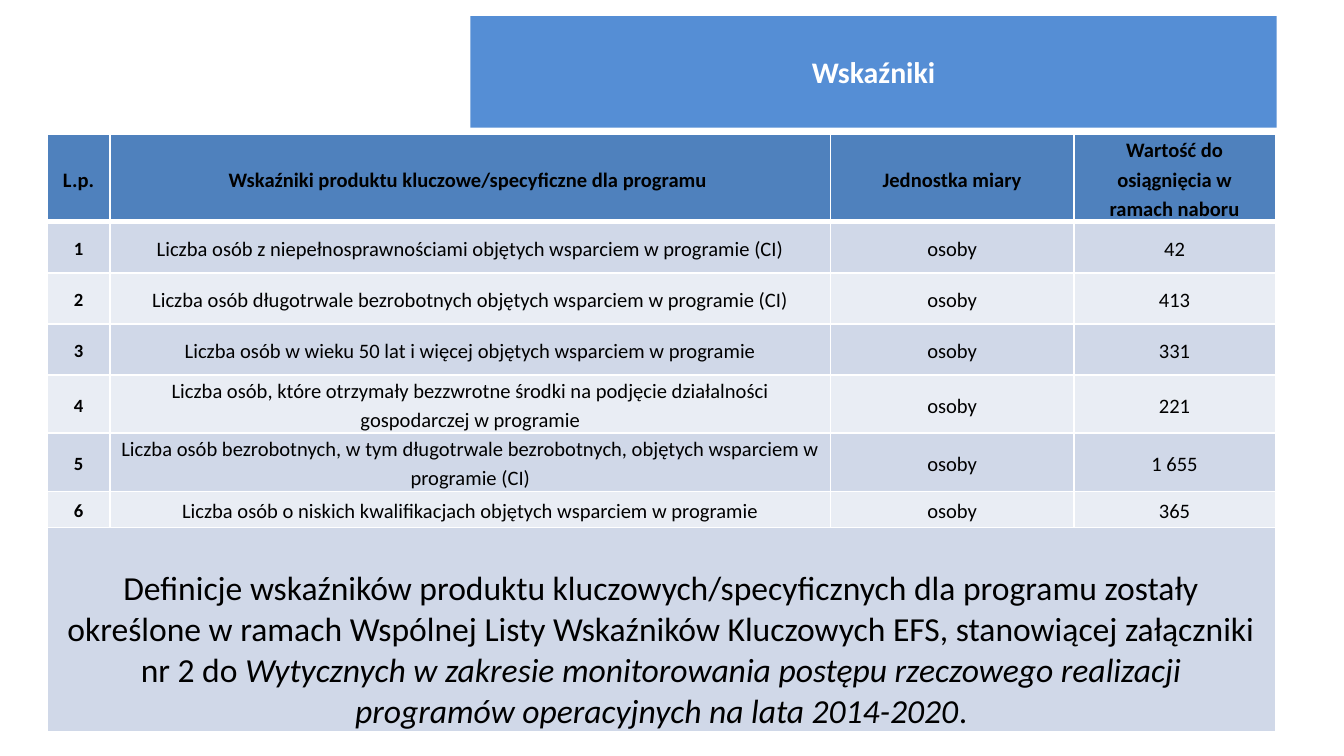
from lxml.etree import SubElement
from pptx import Presentation
from pptx.dml.color import RGBColor
from pptx.enum.text import MSO_ANCHOR as Anchor, MSO_AUTO_SIZE as AutoSize, PP_ALIGN as Align
from pptx.oxml.ns import qn
from pptx.util import Inches, Pt

COLORS = {
    "title": "558ED5",
    "header": "4F81BD",
    "odd": "D0D8E8",
    "even": "E9EDF4",
    "white": "FFFFFF",
    "black": "000000",
}
COLUMN_WIDTHS = [0.47, 5.36, 1.81, 1.5]
ROW_HEIGHTS = [0.57] + [0.38] * 5 + [0.27, 0.19]
TABLE_HEIGHT = 4.34  # the last row grows to hold its text
HEADERS = [
    "L.p.",
    "Wskaźniki produktu kluczowe/specyficzne dla programu ",
    "Jednostka miary",
    "Wartość do osiągnięcia w ramach naboru",
]
INDICATORS = [
    ("Liczba osób z niepełnosprawnościami objętych wsparciem w programie (CI)", "42"),
    ("Liczba osób długotrwale bezrobotnych objętych wsparciem w programie (CI)", "413"),
    ("Liczba osób w wieku 50 lat i więcej objętych wsparciem w programie", "331"),
    ("Liczba osób, które otrzymały bezzwrotne środki na podjęcie działalności "
     "gospodarczej w programie", "221"),
    ("Liczba osób bezrobotnych, w tym długotrwale bezrobotnych, objętych wsparciem "
     "w programie (CI)", "1 655"),
    ("Liczba osób o niskich kwalifikacjach objętych wsparciem w programie", "365"),
]
DEFINITIONS = [
    ("Definicje wskaźników produktu kluczowych/specyficznych dla programu zostały "
     "określone w ramach Wspólnej Listy Wskaźników Kluczowych EFS, stanowiącej "
     "załączniki nr 2 do ", False),
    ("Wytycznych w zakresie monitorowania postępu rzeczowego realizacji programów "
     "operacyjnych na lata 2014-2020", True),
    (".", False),
]


def rgb(name):
    return RGBColor.from_string(COLORS[name])


def write(frame, runs, size=11, color="black", bold=False, spacing=None, after=None):
    """Write a centred paragraph of (text, italic) runs, or a plain string."""
    paragraph = frame.paragraphs[0]
    paragraph.alignment = Align.CENTER
    if spacing:
        paragraph.line_spacing = spacing
    if after:
        paragraph.space_after = Pt(after)
    for text, italic in [(runs, False)] if isinstance(runs, str) else runs:
        run = paragraph.add_run()
        run.text = text
        run.font.name = "Calibri"
        run.font.size = Pt(size)
        run.font.bold = bold
        run.font.italic = italic
        run.font.color.rgb = rgb(color)


def add_borders(cell, bottom=1):
    properties = cell._tc.get_or_add_tcPr()
    widths = {"a:lnL": 1, "a:lnR": 1, "a:lnT": 1, "a:lnB": bottom}
    for position, (side, width) in enumerate(widths.items()):
        line = SubElement(properties, qn(side), w=str(Pt(width)))
        fill = SubElement(line, qn("a:solidFill"))
        SubElement(fill, qn("a:srgbClr"), val=COLORS["white"])
        properties.insert(position, line)


def format_cell(cell, fill, side=0.07, top=0, bottom_border=1):
    cell.fill.solid()
    cell.fill.fore_color.rgb = rgb(fill)
    cell.vertical_anchor = Anchor.MIDDLE
    cell.margin_left = cell.margin_right = Inches(side)
    cell.margin_top, cell.margin_bottom = Inches(top), 0
    add_borders(cell, bottom_border)


def add_title(slide, text):
    title = slide.shapes.title
    title.left, title.top = Inches(3.5), Inches(0.12)
    title.width, title.height = Inches(6), Inches(0.83)
    title.fill.solid()
    title.fill.fore_color.rgb = rgb("title")
    title.text_frame.auto_size = AutoSize.NONE
    title.text_frame.vertical_anchor = Anchor.MIDDLE
    write(title.text_frame, text, size=16, color="white", bold=True)


def add_indicator_table(slide):
    indicators = slide.shapes.add_table(
        len(ROW_HEIGHTS), len(COLUMN_WIDTHS), Inches(0.35), Inches(1),
        Inches(sum(COLUMN_WIDTHS)), Inches(TABLE_HEIGHT))
    table = indicators.table
    for column, width in zip(table.columns, COLUMN_WIDTHS):
        column.width = Inches(width)
    for row, height in zip(table.rows, ROW_HEIGHTS):
        row.height = Inches(height)
    indicators.height = Inches(TABLE_HEIGHT)

    # Header and numbered indicators
    rows = [HEADERS] + [(str(number), name, "osoby", value)
                        for number, (name, value) in enumerate(INDICATORS, 1)]
    for r, texts in enumerate(rows):
        is_header = r == 0
        fill = "header" if is_header else "odd" if r % 2 else "even"
        for c, text in enumerate(texts):
            cell = table.cell(r, c)
            format_cell(cell, fill, bottom_border=3 if is_header else 1)
            write(cell.text_frame, text, size=10 if c == 0 and not is_header else 11,
                  bold=is_header or c == 0, spacing=1.15, after=10)

    # Definitions across the full width
    last = len(rows)
    for c in range(len(COLUMN_WIDTHS)):
        format_cell(table.cell(last, c), "odd", side=0.1, top=0.3)
    definitions = table.cell(last, 0)
    definitions.merge(table.cell(last, len(COLUMN_WIDTHS) - 1))
    write(definitions.text_frame, DEFINITIONS, size=18)


def main():
    presentation = Presentation()
    # Widescreen, 16:9
    presentation.slide_width = Inches(10)
    presentation.slide_height = Inches(10) * 9 // 16
    slide = presentation.slides.add_slide(presentation.slide_layouts[5])
    add_title(slide, "Wskaźniki")
    add_indicator_table(slide)
    presentation.save("out.pptx")


if __name__ == "__main__":
    main()
